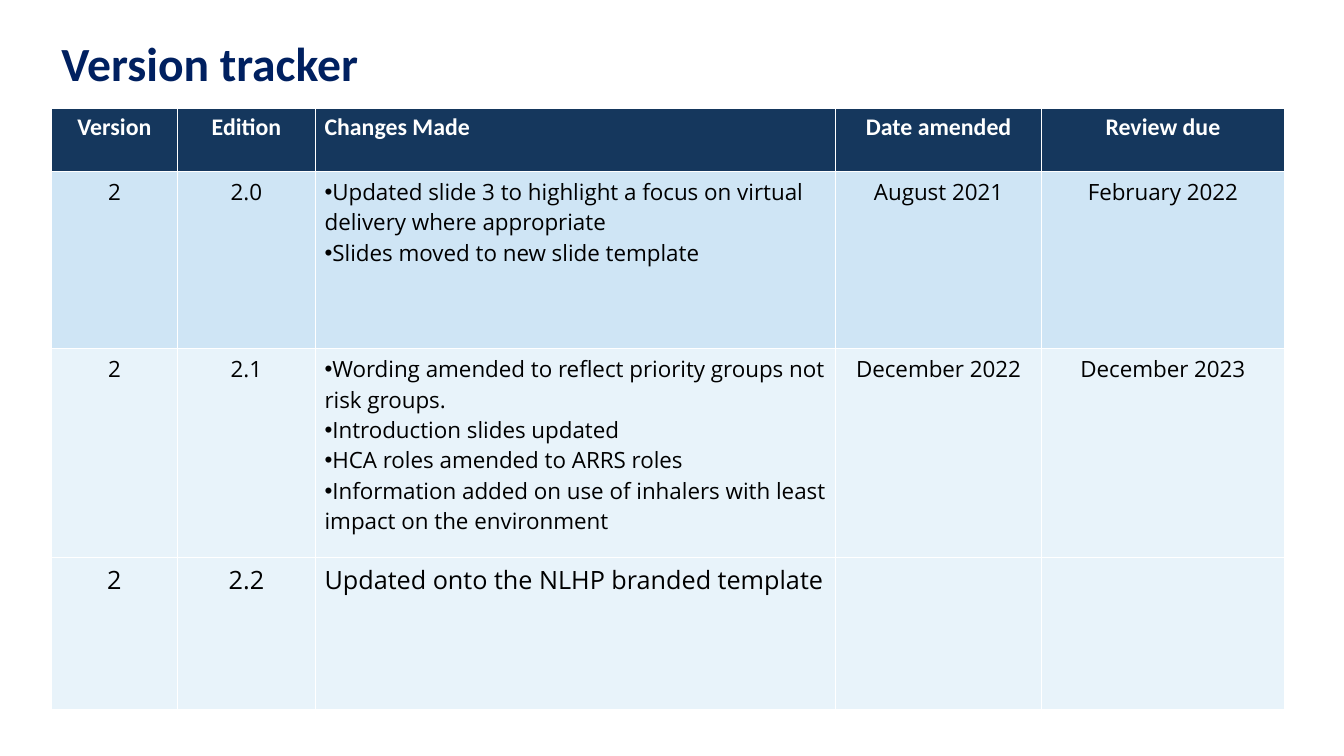
from lxml import etree
from pptx import Presentation
from pptx.dml.color import RGBColor
from pptx.enum.text import MSO_ANCHOR, MSO_AUTO_SIZE, PP_ALIGN
from pptx.oxml.ns import qn
from pptx.util import Inches, Pt

LEFT, MID = PP_ALIGN.LEFT, PP_ALIGN.CENTER
TOP = MSO_ANCHOR.TOP
GROW = MSO_AUTO_SIZE.SHAPE_TO_FIT_TEXT
WIDE, HIGH = 13.33, 7.5
SIDE, RISE = 0.51 / WIDE, 1.07 / HIGH
COLS = [share / WIDE for share in (1.25, 1.37, 5.16, 2.04, 2.41)]
ROWS = [share / HIGH for share in (0.63, 1.76, 2.07, 1.51)]
FILLS = ["15375D", "CFE5F5", "E8F3FA", "E8F3FA"]
FLUSH = 2
HEAD = {"name": "Calibri", "size": Pt(17), "bold": True, "color": "FFFFFF"}
BODY = {"name": "Open Sans", "size": Pt(16), "bold": False, "color": "000000"}
LAST = {**BODY, "size": Pt(18)}
TITLE = {**HEAD, "size": Pt(34), "color": "002060"}
FONTS = [HEAD, BODY, BODY, LAST]
DATA = [
    ["Version", "Edition", "Changes Made", "Date amended", "Review due"],
    ["2", "2.0", [
        "Updated slide 3 to highlight a focus on virtual delivery where appropriate",
        "Slides moved to new slide template",
    ], "August 2021", "February 2022"],
    ["2", "2.1", [
        "Wording amended to reflect priority groups not risk groups.",
        "Introduction slides updated",
        "HCA roles amended to ARRS roles",
        "Information added on use of inhalers with least impact on the environment",
    ], "December 2022", "December 2023"],
    ["2", "2.2", "Updated onto the NLHP branded template", "", ""],
]


def tint(code):
    """Turn a hex string into a colour."""
    return RGBColor.from_string(code)


def apply(item, form):
    """Set each attribute named in a dict of format values."""
    for key, value in form.items():
        if key == "color":
            item.color.rgb = tint(value)
        else:
            setattr(item, key, value)


class Deck:
    """Hold the style and the current slide."""

    def __init__(self):
        """Open a wide deck with one title-only slide."""
        self.show = Presentation()
        self.show.slide_width = Inches(WIDE)
        self.show.slide_height = Inches(HIGH)
        self.slide = self.show.slides.add_slide(self.show.slide_layouts[5])
        self.inset = {
            "margin_left": Inches(0.09), "margin_right": Inches(0.09),
            "margin_top": Inches(0.05), "margin_bottom": Inches(0.05),
        }
        self.rule = "FFFFFF"

    def across(self, share):
        """Give a share of the slide's width."""
        return Inches(round(share * WIDE, 2))

    def down(self, share):
        """Give a share of the slide's height."""
        return Inches(round(share * HIGH, 2))

    def label(self, para, text, form, align):
        """Put one formatted run into a paragraph."""
        para.alignment = align
        run = para.add_run()
        run.text = text
        apply(run.font, form)

    def title(self, text):
        """Place and fill the title."""
        head = self.slide.shapes.title
        apply(head, {
            "left": self.across(SIDE), "top": self.down(0.29 / HIGH),
            "width": self.across(0.5), "height": self.down(0.67 / HIGH),
        })
        apply(head.text_frame, {
            "word_wrap": True, "auto_size": GROW, "vertical_anchor": TOP,
        })
        self.label(head.text_frame.paragraphs[0], text, TITLE, LEFT)

    def bullet(self, para):
        """Give a paragraph a bullet with no indent."""
        props = para._p.get_or_add_pPr()
        props.set("marL", "0")
        props.set("indent", "0")
        etree.SubElement(props, qn("a:buFont")).set("typeface", "Arial")
        etree.SubElement(props, qn("a:buChar")).set("char", "•")

    def border(self, cell):
        """Draw thin lines on all sides of a cell."""
        props = cell._tc.get_or_add_tcPr()
        for spot, side in enumerate(("lnL", "lnR", "lnT", "lnB")):
            line = etree.Element(qn(f"a:{side}"), w=str(Pt(0.5)))
            fill = etree.SubElement(line, qn("a:solidFill"))
            etree.SubElement(fill, qn("a:srgbClr")).set("val", self.rule)
            props.insert(spot, line)

    def cell(self, cell, entry, form, fill, align):
        """Fill one cell with plain text or a list of bullets."""
        apply(cell, {**self.inset, "vertical_anchor": TOP})
        cell.fill.solid()
        cell.fill.fore_color.rgb = tint(fill)
        self.border(cell)
        listed = isinstance(entry, list)
        frame = cell.text_frame
        for spot, text in enumerate(entry if listed else [entry]):
            para = frame.add_paragraph() if spot else frame.paragraphs[0]
            if listed:
                self.bullet(para)
            if text:
                self.label(para, text, form, align)

    def table(self, data):
        """Build the table of versions."""
        grid = self.slide.shapes.add_table(
            len(ROWS), len(COLS), self.across(SIDE), self.down(RISE),
            self.across(sum(COLS)), self.down(sum(ROWS))).table
        apply(grid, {"first_row": True, "horz_banding": False})
        for col, share in zip(grid.columns, COLS):
            col.width = self.across(share)
        for row, share in zip(grid.rows, ROWS):
            row.height = self.down(share)
        for r, (line, form, fill) in enumerate(zip(data, FONTS, FILLS)):
            for c, entry in enumerate(line):
                align = LEFT if c == FLUSH else MID
                self.cell(grid.cell(r, c), entry, form, fill, align)


def main():
    """Build and save the slide."""
    deck = Deck()
    deck.title("Version tracker")
    deck.table(DATA)
    deck.show.save("out.pptx")


if __name__ == "__main__":
    main()
